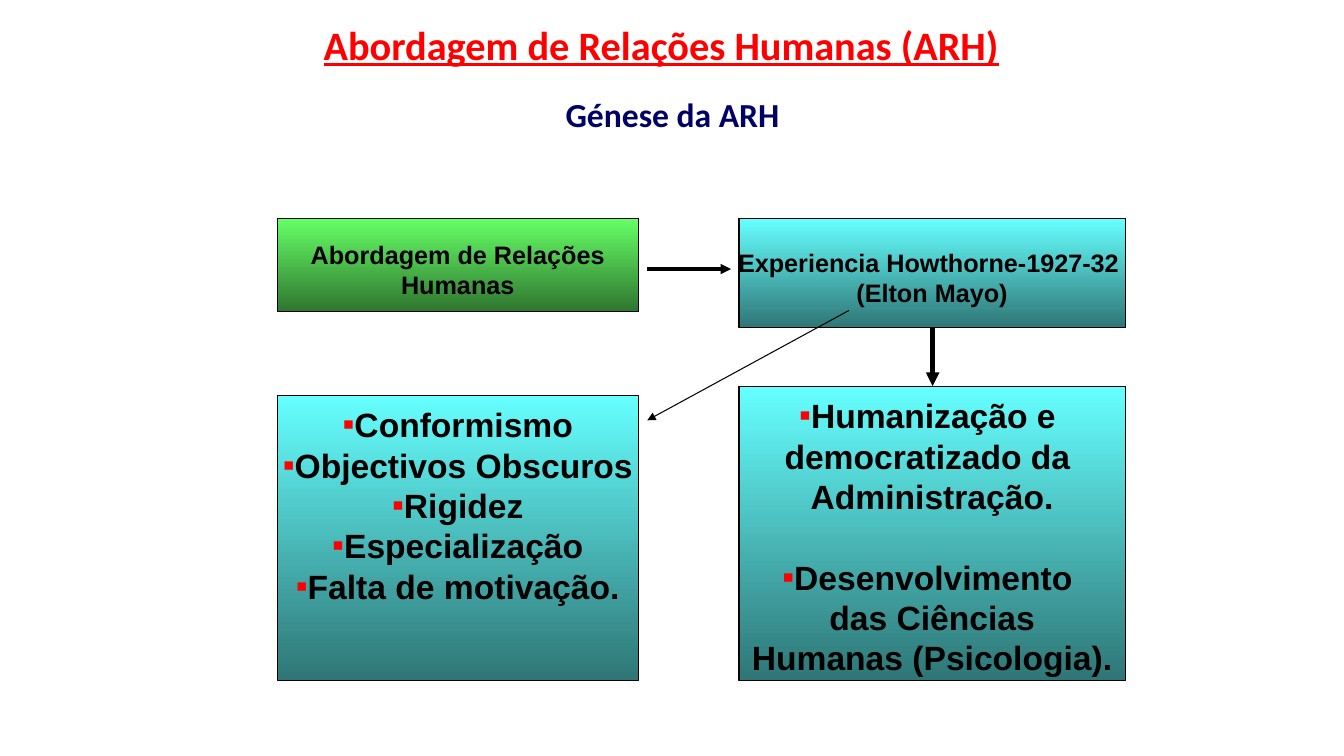
"""Build the slide on the genesis of the human relations approach."""
from dataclasses import dataclass

from lxml.etree import SubElement
from pptx import Presentation
from pptx.dml.color import RGBColor as Rgb
from pptx.enum.shapes import MSO_CONNECTOR as Connector, MSO_SHAPE as Preset
from pptx.enum.text import MSO_ANCHOR as Anchor, PP_ALIGN as Align
from pptx.oxml.ns import qn
from pptx.slide import Slide
from pptx.text.text import TextFrame
from pptx.util import Inches, Pt


@dataclass(frozen=True)
class Theme:
    """Colours, fonts and type sizes."""
    ink: str = "000000"
    title: str = "FF0000"
    subtitle: str = "000066"
    bullet: str = "FF0000"
    green: tuple[str, str] = ("66FF66", "2F762F")
    cyan: tuple[str, str] = ("66FFFF", "2F7676")
    heading_font: str = "Calibri"
    box_font: str = "Arial"
    title_size: float = 28.8
    large: float = 24
    small: float = 18
    leading: float = 1.2


THEME = Theme()


@dataclass(frozen=True)
class Line:
    """One line of text in a box."""
    text: str
    bullet: bool = False
    gap: float = 0


@dataclass(frozen=True)
class Heading:
    """A centred heading."""
    text: str
    area: tuple[float, float, float, float]
    size: float
    color: str
    underline: bool = False


@dataclass(frozen=True)
class Box:
    """A gradient box with its lines."""
    area: tuple[float, float, float, float]
    gradient: tuple[str, str]
    size: float
    anchor: Anchor
    lines: tuple[Line, ...]


@dataclass(frozen=True)
class Arrow:
    """A straight arrow between two points."""
    start: tuple[float, float]
    end: tuple[float, float]
    weight: float


HEADINGS = (
    Heading("Abordagem de Relações Humanas (ARH)", (1.77, 0.14, 9.58, 0.6),
            THEME.title_size, THEME.title, True),
    Heading("Génese da ARH", (2.17, 0.92, 9, 0.43), THEME.large, THEME.subtitle),
)
PROBLEMS = ("Conformismo", "Objectivos Obscuros", "Rigidez", "Especialização",
            "Falta de motivação.")
BOXES = (
    Box((2.75, 2.17, 3.58, 0.92), THEME.green, THEME.small, Anchor.MIDDLE,
        (Line("Abordagem de Relações"), Line("Humanas"))),
    Box((7.33, 2.17, 3.83, 1.08), THEME.cyan, THEME.small, Anchor.MIDDLE,
        (Line("Experiencia Howthorne-1927-32 "), Line("(Elton Mayo)"))),
    Box((7.33, 3.83, 3.83, 2.92), THEME.cyan, THEME.large, Anchor.TOP,
        (Line("Humanização e ", True), Line("democratizado da "), Line("Administração."),
         Line("Desenvolvimento ", True, THEME.large * THEME.leading),
         Line("das Ciências"), Line("Humanas (Psicologia)."))),
    Box((2.75, 3.92, 3.58, 2.83), THEME.cyan, THEME.large, Anchor.TOP,
        tuple(Line(problem, True) for problem in PROBLEMS)),
)
ARROWS = (
    Arrow((6.42, 2.67), (7.25, 2.67), 2.5),
    Arrow((9.25, 3.25), (9.25, 3.83), 3.25),
    Arrow((8.42, 3.08), (6.42, 4.17), 0.75),
)


def apply(target: object, values: dict[str, object]) -> None:
    """Set each named format value on the target."""
    for name, value in values.items():
        setattr(target, name, value)


def write(paragraph: object, text: str, color: str, font: dict[str, object]) -> None:
    """Write one centred bold run."""
    paragraph.alignment = Align.CENTER
    run = paragraph.add_run()
    run.text = text
    apply(run.font, {"bold": True, **font})
    run.font.color.rgb = Rgb.from_string(color)


def add_bullet(paragraph: object) -> None:
    """Give the paragraph a small square bullet."""
    properties = paragraph._p.get_or_add_pPr()
    properties.set("marL", "0")
    properties.set("indent", "0")
    color = SubElement(properties, qn("a:buClr"))
    SubElement(color, qn("a:srgbClr"), val=THEME.bullet)
    SubElement(properties, qn("a:buFont"), typeface=THEME.box_font)
    SubElement(properties, qn("a:buChar"), char="▪")


def fill_lines(frame: TextFrame, box: Box) -> None:
    """Write the lines of a box."""
    for index, line in enumerate(box.lines):
        paragraph = frame.add_paragraph() if index else frame.paragraphs[0]
        apply(paragraph, {"line_spacing": Pt(box.size * THEME.leading),
                          "space_before": Pt(line.gap)})
        if line.bullet:
            add_bullet(paragraph)
        write(paragraph, line.text, THEME.ink,
              {"name": THEME.box_font, "size": Pt(box.size)})


def draw_heading(slide: Slide, heading: Heading) -> None:
    """Draw a heading."""
    frame = slide.shapes.add_textbox(*map(Inches, heading.area)).text_frame
    apply(frame, {"word_wrap": True, "vertical_anchor": Anchor.MIDDLE,
                  "margin_top": 0, "margin_bottom": 0})
    write(frame.paragraphs[0], heading.text, heading.color,
          {"name": THEME.heading_font, "size": Pt(heading.size),
           "underline": heading.underline})


def draw_box(slide: Slide, box: Box) -> None:
    """Draw a box with a vertical gradient and its text."""
    panel = slide.shapes.add_shape(Preset.RECTANGLE, *map(Inches, box.area))
    panel.shadow.inherit = False
    panel.fill.gradient()
    panel.fill.gradient_angle = 270
    for stop, color in zip(panel.fill.gradient_stops, box.gradient):
        stop.color.rgb = Rgb.from_string(color)
    panel.line.color.rgb = Rgb.from_string(THEME.ink)
    panel.line.width = Pt(0.75)
    apply(panel.text_frame, {"word_wrap": False, "vertical_anchor": box.anchor,
                             "margin_top": Inches(0.09), "margin_bottom": 0})
    fill_lines(panel.text_frame, box)


def draw_arrow(slide: Slide, arrow: Arrow) -> None:
    """Draw an arrow with a triangular head."""
    link = slide.shapes.add_connector(Connector.STRAIGHT,
                                      *map(Inches, arrow.start + arrow.end))
    link.line.color.rgb = Rgb.from_string(THEME.ink)
    link.line.width = Pt(arrow.weight)
    SubElement(link.line._get_or_add_ln(), qn("a:tailEnd"), type="triangle")
    SubElement(link._element.spPr, qn("a:effectLst"))


def main() -> None:
    """Build and save the slide."""
    deck = Presentation()
    apply(deck, {"slide_width": Inches(13.33), "slide_height": Inches(7.5)})
    slide = deck.slides.add_slide(deck.slide_layouts[6])
    for heading in HEADINGS:
        draw_heading(slide, heading)
    for box in BOXES:
        draw_box(slide, box)
    for arrow in ARROWS:
        draw_arrow(slide, arrow)
    deck.save("out.pptx")


if __name__ == "__main__":
    main()
